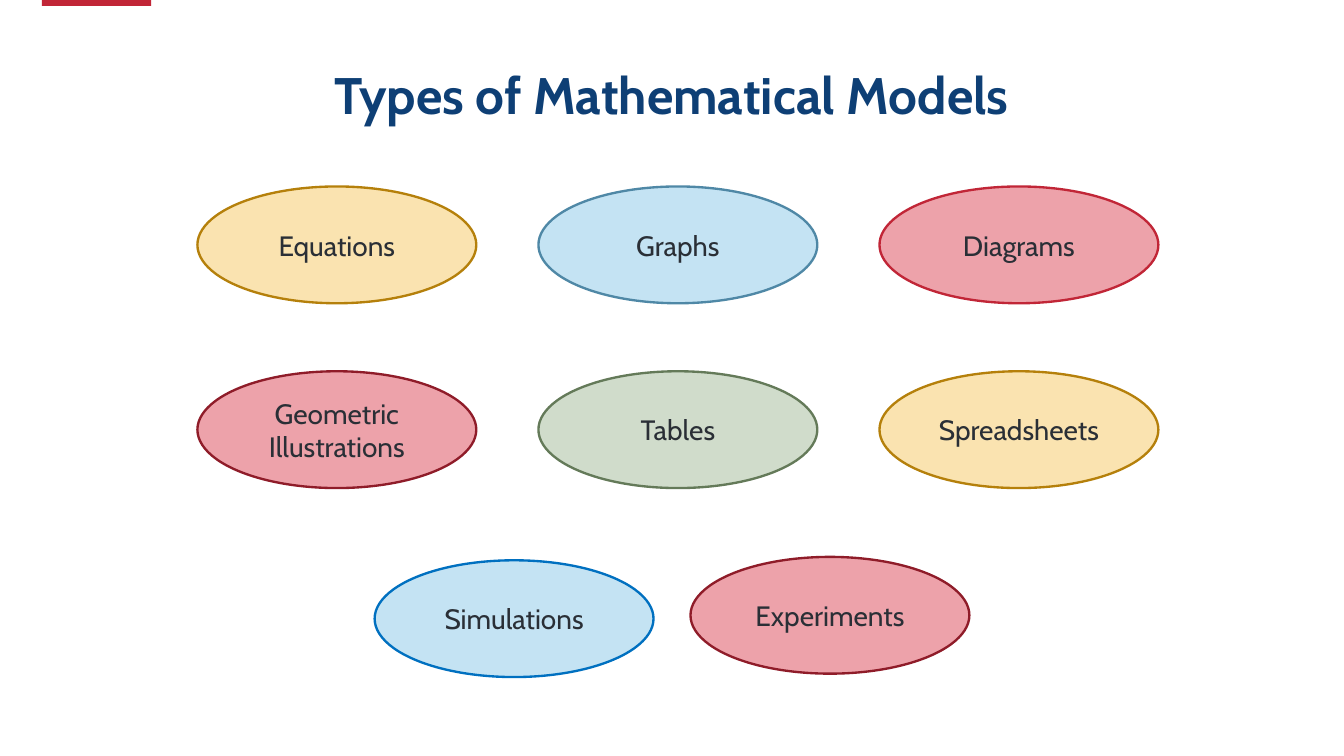
import pptx
import pptx.util
import pptx.dml.color
import pptx.enum.shapes
import pptx.enum.text

Inches = pptx.util.Inches
Shapes = pptx.enum.shapes.MSO_SHAPE
Anchor = pptx.enum.text.MSO_ANCHOR

# Content
TITLE = "Types of Mathematical Models"
GRID = [
    [("Equations", "sand", "gold"), ("Graphs", "sky", "steel"), ("Diagrams", "rose", "red")],
    [("Geometric Illustrations", "rose", "wine"), ("Tables", "sage", "moss"),
     ("Spreadsheets", "sand", "gold")],
]
BOTTOM_ROW = [("Simulations", "sky", "blue", 4.46, 6.67),
              ("Experiments", "rose", "wine", 8.22, 6.63)]

COLOURS = {
    "navy": "0E3F75", "ink": "2A2F36", "red": "C12637", "wine": "8F1C29",
    "rose": "EDA2AA", "sand": "FAE3B0", "gold": "B5800B", "sky": "C4E3F3",
    "steel": "4F88A6", "blue": "0070C0", "sage": "D0DCCB", "moss": "647A59",
}
TITLE_FONT = {"name": "Cabin", "size": pptx.util.Pt(44), "bold": True}
LABEL_FONT = {"name": "Cabin", "size": pptx.util.Pt(24), "bold": False}

# Layout in inches
GRID_LEFT, GRID_TOP = 2.35, 2.22
COLUMN_STEP, ROW_STEP = 4.06, 2.2
OVAL_WIDTH, OVAL_HEIGHT = 3.32, 1.39


def colour(name):
    return pptx.dml.color.RGBColor.from_string(COLOURS[name])


def write(shape, text, font, ink, anchor):
    frame = shape.text_frame
    frame.word_wrap = True
    frame.vertical_anchor = anchor
    para = frame.paragraphs[0]
    para.alignment = pptx.enum.text.PP_ALIGN.CENTER
    span = para.add_run()
    span.text = text
    for key, value in font.items():
        setattr(span.font, key, value)
    span.font.color.rgb = colour(ink)
    return para


def add_filled(page, kind, left, top, width, height, fill):
    shape = page.shapes.add_shape(kind, Inches(left), Inches(top), Inches(width), Inches(height))
    shape.shadow.inherit = False
    shape.fill.solid()
    shape.fill.fore_color.rgb = colour(fill)
    return shape


def add_model(page, label, fill, outline, left, top):
    oval = add_filled(page, Shapes.OVAL, left, top, OVAL_WIDTH, OVAL_HEIGHT, fill)
    oval.line.color.rgb = colour(outline)
    oval.line.width = pptx.util.Pt(2)
    write(oval, label, LABEL_FONT, "ink", Anchor.MIDDLE)


def main():
    deck = pptx.Presentation()
    deck.slide_width, deck.slide_height = Inches(16), Inches(9)
    page = deck.slides.add_slide(deck.slide_layouts[6])

    # Accent bar at the top edge
    bar = add_filled(page, Shapes.RECTANGLE, 0.5, 0, 1.3, 0.07, "red")
    bar.line.fill.background()

    # Title
    box = page.shapes.add_textbox(0, Inches(0.77), deck.slide_width, Inches(1.19))
    margins = {"margin_left": 0.12, "margin_right": 0.12, "margin_top": 0.06, "margin_bottom": 0.06}
    for key, value in margins.items():
        setattr(box.text_frame, key, Inches(value))
    write(box, TITLE, TITLE_FONT, "navy", Anchor.TOP).line_spacing = 0.9

    # Grid of model types
    for row, models in enumerate(GRID):
        for column, model in enumerate(models):
            add_model(page, *model, GRID_LEFT + column * COLUMN_STEP, GRID_TOP + row * ROW_STEP)

    # Bottom pair
    for model in BOTTOM_ROW:
        add_model(page, *model)

    deck.save("out.pptx")


if __name__ == "__main__":
    main()
